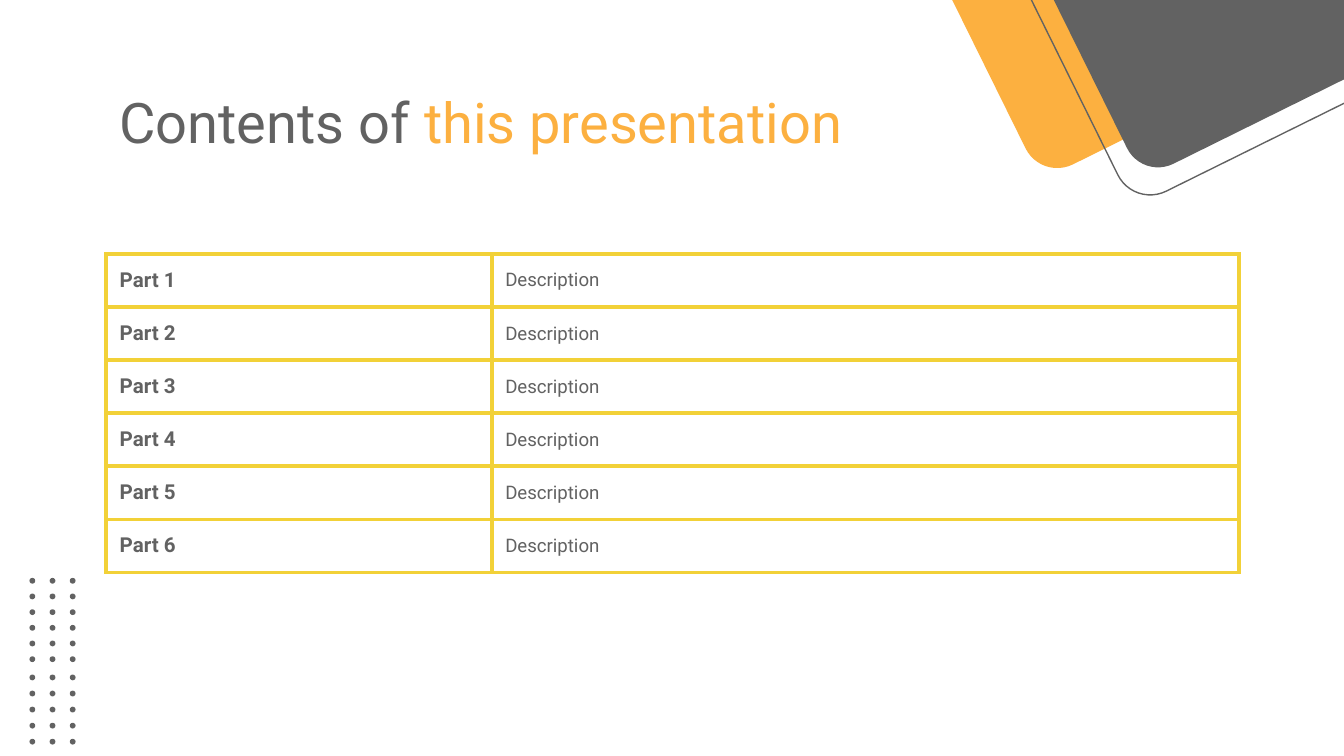
"""Build a contents slide with a table of parts and corner decorations."""
import pptx
import pptx.dml.color
import pptx.enum.shapes
import pptx.enum.text
import pptx.oxml
import pptx.oxml.ns
import pptx.util

Pt = pptx.util.Pt
SHAPES = pptx.enum.shapes.MSO_SHAPE
MIDDLE = pptx.enum.text.MSO_ANCHOR.MIDDLE

TITLE = [("Contents of ", "gray"), ("this presentation", "orange")]
PARTS = [(f"Part {number}", "Description") for number in range(1, 7)]

THEME = {
    "font": "Roboto",
    "gray": "626262",
    "orange": "FCB040",
    "border": "F2D138",
    "title_size": 30,
    "part_size": 11,
    "description_size": 10,
}

SLIDE_SIZE = (720, 405)
TITLE_BOX = (56.9, 42.5, 607, 44.6)
TABLE_BOX = (56.9, 136.1, 607, 170.7)
COLUMN_WIDTHS = (206.6, 400.4)
CELL_MARGIN = 7.2
BORDER_WIDTH = 2.25

CARD_ANGLE = 63.7
CARD_ROUNDING = 0.081
CARDS = [
    {"box": (484.6, -177.8, 243.4, 228.2), "fill": "orange", "line": "orange"},
    {"box": (530.6, -175.7, 254.9, 239), "fill": None, "line": "gray"},
    {"box": (538.6, -177.8, 243.4, 228.2), "fill": "gray", "line": None},
]

DOT_SIZE = 3.1
DOT_LEFT, DOT_COLUMN_STEP, DOT_COLUMNS = 15.8, 10.8, 3
DOT_GROUPS = [
    {"top": 309.6, "step": 8.4, "rows": 6},
    {"top": 361.4, "step": 8.6, "rows": 5},
]


def color(name):
    return pptx.dml.color.RGBColor.from_string(THEME[name])


def apply(target, values):
    for name, value in values.items():
        setattr(target, name, value)


def add_figure(slide, kind, box, fill, line=None):
    shape = slide.shapes.add_shape(kind, *map(Pt, box))
    shape.shadow.inherit = False
    if fill:
        shape.fill.solid()
        shape.fill.fore_color.rgb = color(fill)
    else:
        shape.fill.background()
    if line:
        shape.line.color.rgb = color(line)
        shape.line.width = Pt(0.75)
    else:
        shape.line.fill.background()
    return shape


def add_run(paragraph, text, size, color_name, bold=False):
    run = paragraph.add_run()
    run.text = text
    apply(run.font, {"name": THEME["font"], "size": Pt(THEME[size]), "bold": bold})
    run.font.color.rgb = color(color_name)


def add_cards(slide):
    for card in CARDS:
        shape = add_figure(slide, SHAPES.ROUNDED_RECTANGLE, card["box"], card["fill"], card["line"])
        shape.adjustments[0] = CARD_ROUNDING
        shape.rotation = CARD_ANGLE


def add_dots(slide):
    for group in DOT_GROUPS:
        for row in range(group["rows"]):
            for column in range(DOT_COLUMNS):
                left = DOT_LEFT + column * DOT_COLUMN_STEP
                top = group["top"] + row * group["step"]
                add_figure(slide, SHAPES.OVAL, (left, top, DOT_SIZE, DOT_SIZE), "gray")


def add_title(slide):
    frame = slide.shapes.add_textbox(*map(Pt, TITLE_BOX)).text_frame
    sides = ("left", "right", "top", "bottom")
    apply(frame, {f"margin_{side}": Pt(CELL_MARGIN) for side in sides})
    apply(frame, {"word_wrap": True, "vertical_anchor": MIDDLE})
    for text, color_name in TITLE:
        add_run(frame.paragraphs[0], text, "title_size", color_name)


def add_borders(cell):
    properties = cell._tc.get_or_add_tcPr()
    for side in "LRTB":
        properties.append(pptx.oxml.parse_xml(
            f'<a:ln{side} {pptx.oxml.ns.nsdecls("a")} w="{Pt(BORDER_WIDTH)}">'
            f'<a:solidFill><a:srgbClr val="{THEME["border"]}"/></a:solidFill></a:ln{side}>'
        ))


def add_contents(slide):
    table = slide.shapes.add_table(len(PARTS), len(COLUMN_WIDTHS), *map(Pt, TABLE_BOX)).table
    apply(table, {"first_row": False, "horz_banding": False})
    for column, width in zip(table.columns, COLUMN_WIDTHS):
        column.width = Pt(width)
    cell_format = {
        "margin_left": Pt(CELL_MARGIN), "margin_right": Pt(CELL_MARGIN),
        "margin_top": 0, "margin_bottom": 0, "vertical_anchor": MIDDLE,
    }
    styles = [("part_size", True), ("description_size", False)]
    for row, texts in zip(table.rows, PARTS):
        row.height = Pt(TABLE_BOX[3] / len(PARTS))
        for cell, text, (size, bold) in zip(row.cells, texts, styles):
            apply(cell, cell_format)
            add_borders(cell)
            cell.fill.background()
            add_run(cell.text_frame.paragraphs[0], text, size, "gray", bold)


def main():
    presentation = pptx.Presentation()
    presentation.slide_width, presentation.slide_height = map(Pt, SLIDE_SIZE)
    slide = presentation.slides.add_slide(presentation.slide_layouts[6])
    add_cards(slide)
    add_dots(slide)
    add_title(slide)
    add_contents(slide)
    presentation.save("out.pptx")


if __name__ == "__main__":
    main()
